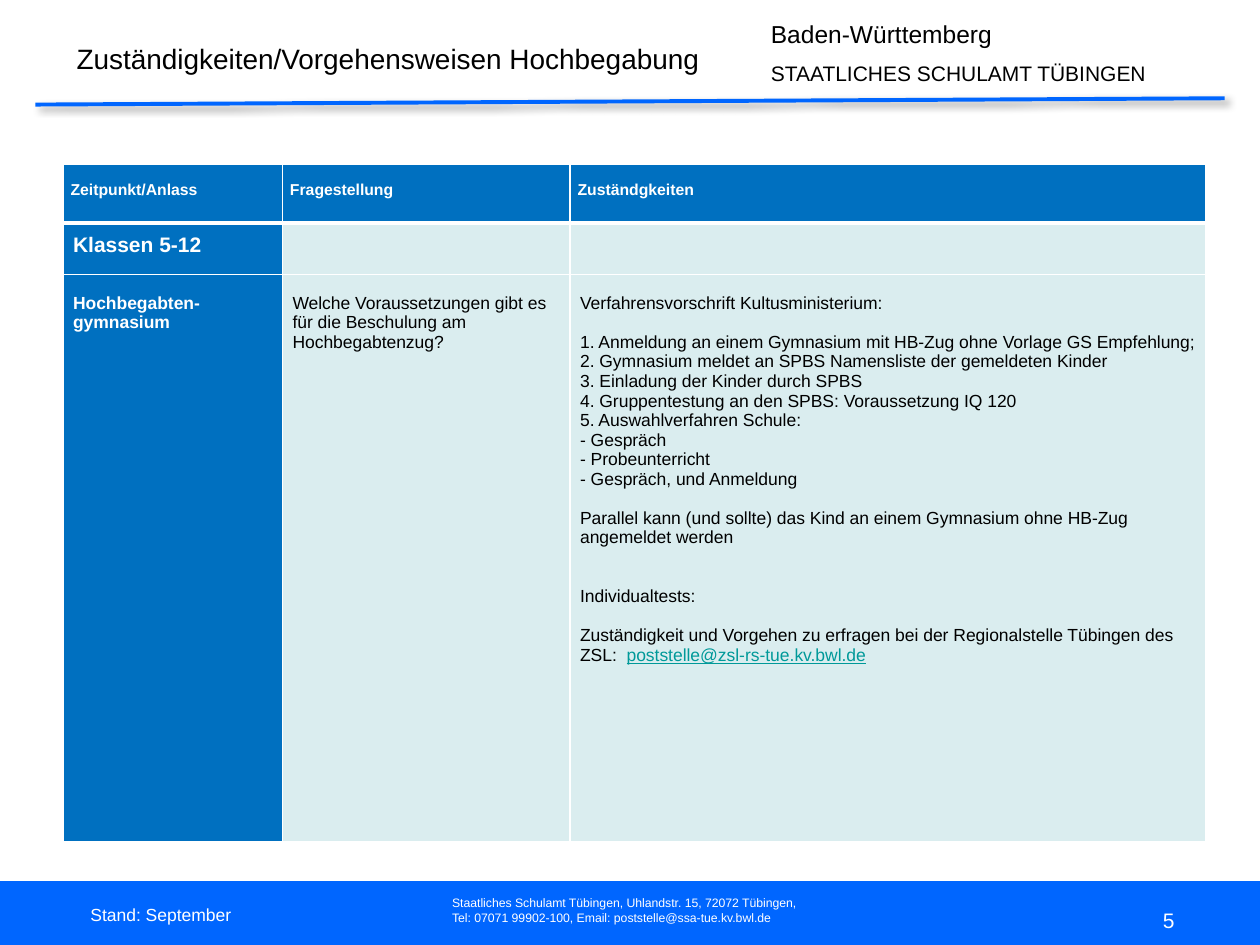
from lxml.etree import SubElement as Sub
from pptx import Presentation
from pptx.dml.color import RGBColor as Rgb
from pptx.enum.shapes import MSO_CONNECTOR as Conn, MSO_SHAPE as Shape
from pptx.enum.text import MSO_ANCHOR as Anchor, PP_ALIGN as Align
from pptx.oxml.ns import qn
from pptx.util import Inches, Pt

WIDE, HIGH = 10, 7.5
HUES = {"blue": "0066FF", "head": "0070C0", "pale": "DAEDEF",
        "link": "009999", "white": "FFFFFF", "black": "000000"}
LINE = 11.2  # one text line of the table body, in points


def hue(name):
    return Rgb.from_string(HUES[name])


def place(box):
    """Turn shares of the slide into left, top, width, height."""
    return [Inches(part * side) for part, side in zip(box, (WIDE, HIGH) * 2)]


def inner(box, part):
    """Find a part, given in shares of its box."""
    x, y, w, h = box
    return x + part[0] * w, y + part[1] * h, part[2] * w, part[3] * h


def add_run(par, text, color="black", **form):
    run = par.add_run()
    run.text = text
    run.font.name = "Arial"
    run.font.color.rgb = hue(color)
    for key, val in form.items():
        setattr(run.font, key, val)


def write(frame, pars, **form):
    """Each paragraph is (gap above in points, text or lines)."""
    for num, (gap, text) in enumerate(pars):
        par = frame.add_paragraph() if num else frame.paragraphs[0]
        if num:
            par.space_before = Pt(gap)
        for row, line in enumerate(text.splitlines()):
            if row:
                par.add_line_break()
            add_run(par, line, **form)
    return par


def add_text(slide, box, pars, anchor=Anchor.TOP, **form):
    frame = slide.shapes.add_textbox(*place(box)).text_frame
    frame.word_wrap = True
    frame.vertical_anchor = anchor
    return write(frame, pars, **form)


# Header: title, office name, rule with a soft shadow
def add_head(slide, box):
    add_text(slide, inner(box, (0.051, 0.34, 0.543, 0.47)),
             [(0, "Zuständigkeiten/Vorgehensweisen Hochbegabung")], size=Pt(16))
    par = add_text(slide, inner(box, (0.602, 0.12, 0.326, 0.77)),
                   [(0, "Baden-Württemberg"),
                    (6.8, "STAATLICHES SCHULAMT TÜBINGEN")], size=Pt(14))
    par.runs[0].font.size = Pt(12)

    x, y, w, h = place(inner(box, (0.028, 0.94, 0.944, 0.06)))
    rule = slide.shapes.add_connector(Conn.STRAIGHT, x, y + h, x + w, y)
    rule.line.color.rgb = hue("blue")
    rule.line.width = Pt(2.25)
    fx = Sub(rule._element.spPr, qn("a:effectLst"))
    shade = Sub(fx, qn("a:outerShdw"), blurRad=str(Pt(4)), dist=str(Pt(3)),
                dir=str(45 * 60000), algn="tl", rotWithShape="0")
    tone = Sub(shade, qn("a:srgbClr"), val=HUES["black"])
    Sub(tone, qn("a:alpha"), val="40000")


def add_edges(cell, base):
    props = cell._tc.get_or_add_tcPr()
    for side in "LRTB":
        width = base if side == "B" else 1
        edge = Sub(props, qn(f"a:ln{side}"), w=str(Pt(width)))
        fill = Sub(edge, qn("a:solidFill"))
        Sub(fill, qn("a:srgbClr"), val=HUES["white"])


# Table: header row, class row, body row
STEPS = [
    (0, "Verfahrensvorschrift Kultusministerium:"),
    (LINE, "1. Anmeldung an einem Gymnasium mit HB-Zug ohne Vorlage GS Empfehlung;"),
    (0, "2. Gymnasium meldet an SPBS Namensliste der gemeldeten Kinder"),
    (0, "3. Einladung der Kinder durch SPBS"),
    (0, "4. Gruppentestung an den SPBS: Voraussetzung IQ 120"),
    (0, "5. Auswahlverfahren Schule:"),
    (0, "- Gespräch"),
    (0, "- Probeunterricht"),
    (0, "- Gespräch, und Anmeldung"),
    (LINE, "Parallel kann (und sollte) das Kind an einem Gymnasium ohne HB-Zug "
           "angemeldet werden"),
    (2 * LINE, "Individualtests:"),
    (LINE, "Zuständigkeit und Vorgehen zu erfragen bei der Regionalstelle "
           "Tübingen des ZSL:  "),
]
CELLS = [
    [[(0, "Zeitpunkt/Anlass")], [(0, "Fragestellung")], [(0, "Zuständgkeiten")]],
    [[(0, "Klassen 5-12")], [], []],
    [[(0, "Hochbegabten-gymnasium")],
     [(0, "Welche Voraussetzungen gibt es für die Beschulung am "
          "Hochbegabtenzug?")], STEPS],
]
# Row height, text size, top inset, side inset, lower edge
ROWS = [(0.47, 9, 0.14, 0.06, 3), (0.41, 12, 0.08, 0.08, 1),
        (4.5, 10, 0.15, 0.08, 1)]
COLS = [1.74, 2.28, 5.04]


def add_grid(slide, box):
    spot = place(box)
    table = slide.shapes.add_table(len(ROWS), len(COLS), *spot).table
    for col, part in zip(table.columns, COLS):
        col.width = int(spot[2] * part / sum(COLS))
    total = sum(row[0] for row in ROWS)
    for r, (part, size, top, side, base) in enumerate(ROWS):
        table.rows[r].height = int(spot[3] * part / total)
        for c, pars in enumerate(CELLS[r]):
            cell = table.cell(r, c)
            dark = r == 0 or c == 0
            insets = {"margin_left": side, "margin_right": side,
                      "margin_top": top, "margin_bottom": 0}
            for key, val in insets.items():
                setattr(cell, key, Inches(val))
            add_edges(cell, base)
            cell.fill.solid()
            cell.fill.fore_color.rgb = hue("head" if dark else "pale")
            if pars:
                write(cell.text_frame, pars, size=Pt(size), bold=dark,
                      color="white" if dark else "black")
    last = table.cell(2, 2).text_frame.paragraphs[-1]
    add_run(last, "poststelle@zsl-rs-tue.kv.bwl.de", "link",
            size=Pt(10), bold=False, underline=True)


# Footer: blue band, date, address, page number
def add_foot(slide, box):
    band = slide.shapes.add_shape(Shape.RECTANGLE, *place(box))
    band.shadow.inherit = False
    band.fill.solid()
    band.fill.fore_color.rgb = band.line.color.rgb = hue("blue")
    band.line.width = Pt(2)
    add_text(slide, inner(box, (0.349, 0.1, 0.297, 0.7)),
             [(0, "Staatliches Schulamt Tübingen, Uhlandstr. 15, 72072 Tübingen,\n"
                  "Tel: 07071 99902-100, Email: poststelle@ssa-tue.kv.bwl.de")],
             size=Pt(7), color="white")
    add_text(slide, inner(box, (0.062, 0.1, 0.233, 0.82)),
             [(0, "Stand: September")], Anchor.MIDDLE, size=Pt(10), color="white")
    page = add_text(slide, inner(box, (0.709, 0.18, 0.233, 0.82)), [(0, "5")],
                    Anchor.MIDDLE, size=Pt(12), color="white")
    page.alignment = Align.RIGHT


def main():
    deck = Presentation()
    deck.slide_width, deck.slide_height = Inches(WIDE), Inches(HIGH)
    slide = deck.slides.add_slide(deck.slide_layouts[6])
    foot = 7.01 / HIGH
    add_foot(slide, (0, foot, 1, 1 - foot))
    add_head(slide, (0, 0, 1, 0.83 / HIGH))
    add_grid(slide, (0.05, 1.3 / HIGH, 0.907, 5.38 / HIGH))
    deck.save("out.pptx")


if __name__ == "__main__":
    main()
